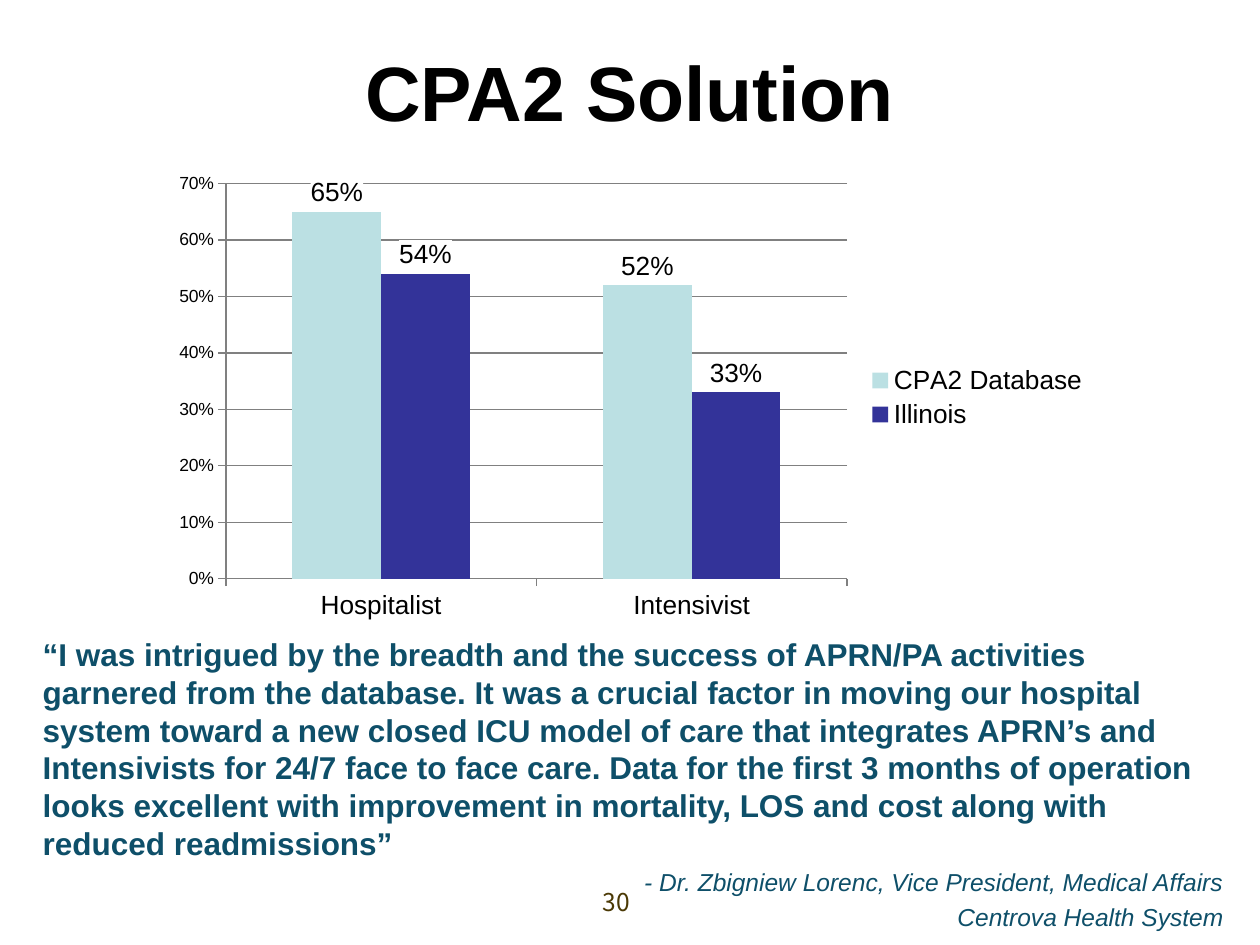
from lxml.etree import SubElement
from pptx import Presentation
from pptx.chart.data import CategoryChartData
from pptx.dml.color import RGBColor
from pptx.enum.chart import XL_CHART_TYPE as ChartType, XL_LABEL_POSITION as LabelPosition
from pptx.enum.chart import XL_LEGEND_POSITION as LegendPosition, XL_TICK_MARK as TickMark
from pptx.enum.text import MSO_ANCHOR as Anchor, PP_ALIGN as Align
from pptx.oxml import parse_xml
from pptx.oxml.ns import nsdecls, qn
from pptx.util import Inches, Pt

BLACK, TEAL, BROWN, GRAY = "000000", "0E4F69", "4B3905", "808080"
QUOTE = (
    "“I was intrigued by the breadth and the success of APRN/PA activities garnered from the "
    "database. It was a crucial factor in moving our hospital system toward a new closed ICU "
    "model of care that integrates APRN’s and Intensivists for 24/7 face to face care. Data for "
    "the first 3 months of operation looks excellent with improvement in mortality, LOS and cost "
    "along with reduced readmissions”"
)
CREDITS = ["- Dr. Zbigniew Lorenc, Vice President, Medical Affairs", "Centrova Health System"]
SERIES = [("CPA2 Database", (0.65, 0.52), "BBE0E3"), ("Illinois", (0.54, 0.33), "333399")]


def color(value):
    """Turn a hex string into a colour."""
    return RGBColor.from_string(value)


def set_font(font, size, value=BLACK, name="Arial", bold=False, italic=False):
    """Apply the face, size, colour and style to a font."""
    font.name, font.size, font.bold, font.italic = name, Pt(size), bold, italic
    font.color.rgb = color(value)


def place(shape, left, top, width, height):
    """Move and size a shape in inches."""
    shape.left, shape.top = Inches(left), Inches(top)
    shape.width, shape.height = Inches(width), Inches(height)


def add_title(page, text):
    """Fill and format the title placeholder."""
    title = page.shapes.title
    place(title, 0.5, 0.3, 9, 1.25)
    frame = title.text_frame
    frame.text = text
    frame.vertical_anchor = Anchor.TOP
    frame.margin_top = Inches(0.05)
    para = frame.paragraphs[0]
    para.alignment = Align.CENTER
    set_font(para.font, 44, bold=True)


def add_text_box(page, left, top, width, height):
    """Add a wrapping text box and return its frame."""
    box = page.shapes.add_textbox(Inches(left), Inches(top), Inches(width), Inches(height))
    box.text_frame.word_wrap = True
    return box.text_frame


def add_page_number(page, number):
    """Add the centred page number."""
    para = add_text_box(page, 3.85, 6.99, 2.08, 0.5).paragraphs[0]
    para.text = number
    para.alignment = Align.CENTER
    set_font(para.font, 14, BROWN, "Noto Sans CJK JP")


def add_quote(page):
    """Add the quotation and its right-aligned credits."""
    frame = add_text_box(page, 0.24, 4.99, 9.57, 1.77)
    quote = frame.paragraphs[0]
    quote.text = QUOTE
    set_font(quote.font, 18, TEAL, bold=True)
    for text in CREDITS:
        credit = frame.add_paragraph()
        credit.text = text
        credit.alignment = Align.RIGHT
        credit.space_before = Pt(3)
        set_font(credit.font, 14, TEAL, italic=True)


def set_plot_layout(chart, **fractions):
    """Fix the inner plot area as fractions of the chart."""
    plot_area = chart.plots[0]._element.getparent()
    layout = plot_area.find(qn("c:layout"))
    if layout is None:
        layout = parse_xml(f"<c:layout {nsdecls('c')}/>")
        plot_area.insert(0, layout)
    manual = SubElement(layout, qn("c:manualLayout"))
    settings = {"layoutTarget": "inner", "xMode": "edge", "yMode": "edge", **fractions}
    for key, value in settings.items():
        SubElement(manual, qn(f"c:{key}")).set("val", str(value))


def style_axis(axis, size):
    """Give an axis its font, line and outward ticks."""
    set_font(axis.tick_labels.font, size)
    axis.major_tick_mark, axis.minor_tick_mark = TickMark.OUTSIDE, TickMark.NONE
    axis.format.line.color.rgb = color(GRAY)


def style_series(series, value):
    """Colour a series and label its columns on white."""
    series.format.fill.solid()
    series.format.fill.fore_color.rgb = color(value)
    labels = series.data_labels
    labels.show_value = True
    labels.position = LabelPosition.OUTSIDE_END
    labels.number_format, labels.number_format_is_linked = "0%", False
    set_font(labels.font, 15)
    labels._element.find(qn("c:numFmt")).addnext(parse_xml(
        f'<c:spPr {nsdecls("c", "a")}><a:solidFill><a:srgbClr val="FFFFFF"/></a:solidFill></c:spPr>'))


def add_column_chart(page):
    """Add the clustered columns comparing database and state."""
    data = CategoryChartData(number_format="0%")
    data.categories = ["Hospitalist", "Intensivist"]
    for name, values, _ in SERIES:
        data.add_series(name, values)
    chart = page.shapes.add_chart(ChartType.COLUMN_CLUSTERED, Inches(1.27), Inches(1.31),
                                  Inches(7.47), Inches(3.69), data).chart
    set_font(chart.font, 10)
    chart.has_title = False
    chart.has_legend = True
    chart.legend.position = LegendPosition.RIGHT
    chart.legend.include_in_layout = False
    set_font(chart.legend.font, 15)
    style_axis(chart.category_axis, 15)
    scale = chart.value_axis
    style_axis(scale, 10)
    scale.minimum_scale, scale.maximum_scale, scale.major_unit = 0, 0.7, 0.1
    scale.tick_labels.number_format, scale.tick_labels.number_format_is_linked = "0%", False
    scale.major_gridlines.format.line.color.rgb = color(GRAY)
    plot = chart.plots[0]
    plot.gap_width, plot.overlap, plot.vary_by_categories = 150, 0, False
    for series, (_, _, value) in zip(plot.series, SERIES):
        style_series(series, value)
    set_plot_layout(chart, x=0.07, y=0.04, w=0.66, h=0.85)


def main():
    """Build and save the slide."""
    deck = Presentation()
    deck.slide_width, deck.slide_height = Inches(10), Inches(7.5)
    page = deck.slides.add_slide(deck.slide_layouts[5])
    add_page_number(page, "30")
    add_title(page, "CPA2 Solution")
    add_quote(page)
    add_column_chart(page)
    deck.save("out.pptx")


if __name__ == "__main__":
    main()
